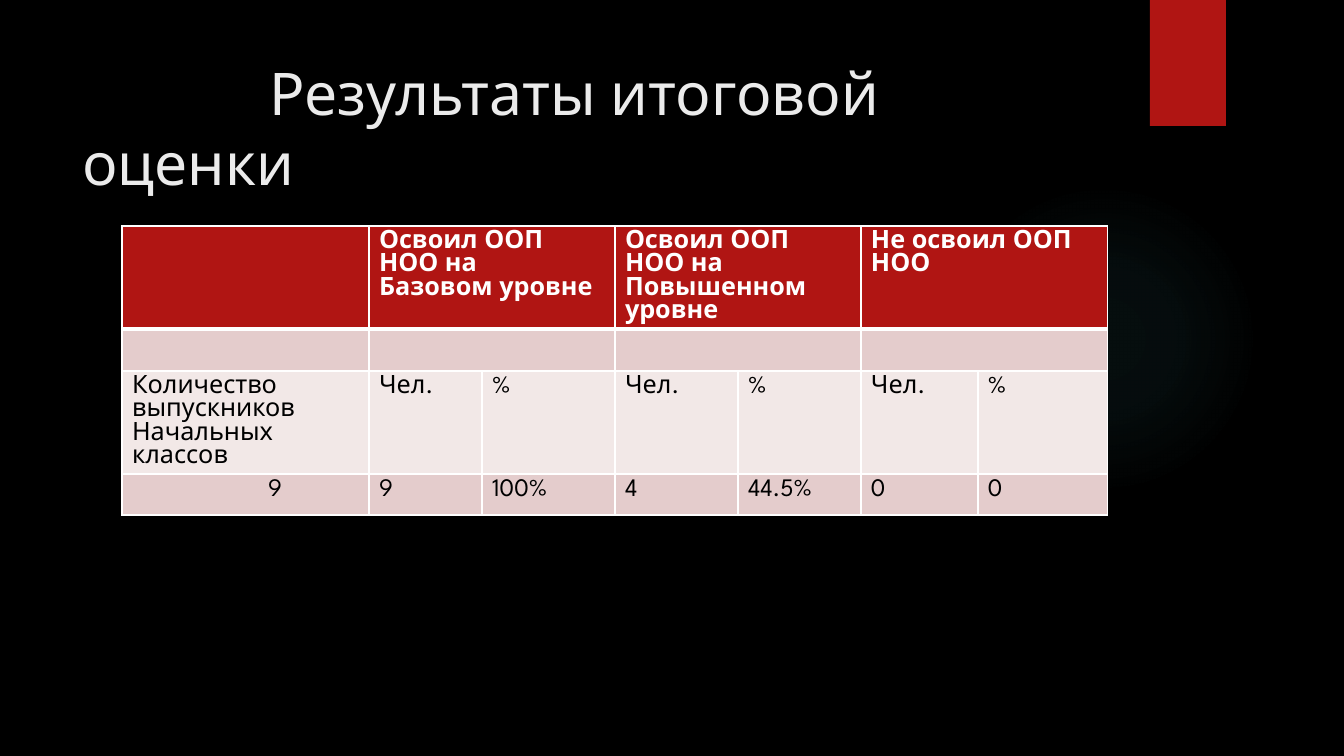
from lxml import etree
from pptx import Presentation
from pptx.dml.color import RGBColor
from pptx.enum.shapes import MSO_SHAPE as Preset
from pptx.enum.text import MSO_ANCHOR as Anchor, PP_ALIGN as Align
from pptx.oxml import parse_xml
from pptx.oxml.ns import nsdecls, qn
from pptx.util import Emu, Pt

BLACK = RGBColor(0x00, 0x00, 0x00)
WHITE = RGBColor(0xFF, 0xFF, 0xFF)
PALE = RGBColor(0xEB, 0xEB, 0xEB)
RED = RGBColor(0xB0, 0x15, 0x13)
ROSE = RGBColor(0xE4, 0xCC, 0xCC)
BLUSH = RGBColor(0xF2, 0xE8, 0xE7)
TEAL = RGBColor(0x50, 0xB9, 0xC1)
FONT = "League Spartan"

TITLE = "Результаты итоговой оценки"
HEADS = [
    [],
    ["Освоил ООП НОО на", "Базовом уровне"],
    ["Освоил ООП НОО на", "Повышенном уровне"],
    ["Не освоил ООП НОО"],
]
UNITS = [["Количество выпускников", "Начальных классов"]] + [["Чел."], ["%"]] * 3
COUNTS = [["9"], ["9"], ["100%"], ["4"], ["44.5%"], ["0"], ["0"]]


def spread(heads):
    """Leave an empty place after each head that spans two columns."""
    return heads[:1] + [part for head in heads[1:] for part in (head, [])]


ROWS = [spread(HEADS), [[]] * 7, UNITS, COUNTS]
FILLS = [RED, ROSE, BLUSH, ROSE]
COLS = [247, 113, 133, 123, 123, 117, 130]
HIGHS = [102, 42, 103, 41]
GLOW = [(0, 7), (36, 6), (69, 0)]  # place and opacity, per cent


def px(n):
    return Emu(round(n * 914400 / 100.8))


def write(para, text, size, color, bold=False):
    run = para.add_run()
    run.text = text
    font = run.font
    font.name, font.size, font.bold = FONT, Pt(size), bold
    font.color.rgb = color


def add_shape(slide, kind, box, color):
    shape = slide.shapes.add_shape(kind, *map(px, box))
    shape.shadow.inherit = False
    shape.fill.solid()
    shape.fill.fore_color.rgb = color
    shape.line.fill.background()
    return shape


def add_glow(slide):
    glow = add_shape(slide, Preset.OVAL, (949, 184, 310, 310), TEAL)
    stops = "".join(
        f'<a:gs pos="{pos * 1000}"><a:srgbClr val="{TEAL}">'
        f'<a:alpha val="{alpha * 1000}"/></a:srgbClr></a:gs>'
        for pos, alpha in GLOW)
    grad = parse_xml(
        f'<a:gradFill {nsdecls("a")}><a:gsLst>{stops}</a:gsLst><a:path path="circle">'
        '<a:fillToRect l="50000" t="50000" r="50000" b="50000"/></a:path></a:gradFill>')
    props = glow._element.spPr
    props.replace(props.find(qn("a:solidFill")), grad)


def set_title(slide):
    title = slide.shapes.title
    title.left, title.top, title.width, title.height = map(px, (72, 50, 1037, 154))
    frame = title.text_frame
    frame.word_wrap = True
    frame.vertical_anchor = Anchor.MIDDLE
    para = frame.paragraphs[0]
    para.alignment = Align.LEFT
    para._p.get_or_add_pPr().set("indent", str(px(187)))
    write(para, TITLE, 42, PALE)
    slide.shapes._spTree.append(title._element)


def set_edges(cell, low):
    props = cell._tc.get_or_add_tcPr()
    for side, width in zip("LRTB", (1, 1, 1, low)):
        line = etree.SubElement(props, qn(f"a:ln{side}"), w=str(Pt(width)))
        fill = etree.SubElement(line, qn("a:solidFill"))
        etree.SubElement(fill, qn("a:srgbClr"), val=str(WHITE))


def add_table(slide):
    frame = slide.shapes.add_table(
        len(ROWS), len(COLS), *map(px, (122, 226, sum(COLS), sum(HIGHS))))
    table = frame.table
    for col, width in zip(table.columns, COLS):
        col.width = px(width)
    for row, high in zip(table.rows, HIGHS):
        row.height = px(high)
    for r, row in enumerate(ROWS):
        head = r == 0
        for c, lines in enumerate(row):
            cell = table.cell(r, c)
            set_edges(cell, 3 if head else 1)
            cell.fill.solid()
            cell.fill.fore_color.rgb = FILLS[r]
            text = cell.text_frame
            for i, line in enumerate(lines):
                para = text.add_paragraph() if i else text.paragraphs[0]
                write(para, line, 18, WHITE if head else BLACK, head)
    for r in (0, 1):
        for c in (1, 3, 5):
            table.cell(r, c).merge(table.cell(r, c + 1))
    total = table.cell(3, 0).text_frame.paragraphs[0]
    total._p.get_or_add_pPr().set("indent", str(px(136)))


def main():
    deck = Presentation()
    deck.slide_width, deck.slide_height = px(1344), px(756)
    slide = deck.slides.add_slide(deck.slide_layouts[5])
    slide.background.fill.solid()
    slide.background.fill.fore_color.rgb = BLACK
    add_glow(slide)
    add_shape(slide, Preset.RECTANGLE, (1150, 0, 76, 126), RED)
    set_title(slide)
    add_table(slide)
    deck.save("out.pptx")


if __name__ == "__main__":
    main()
